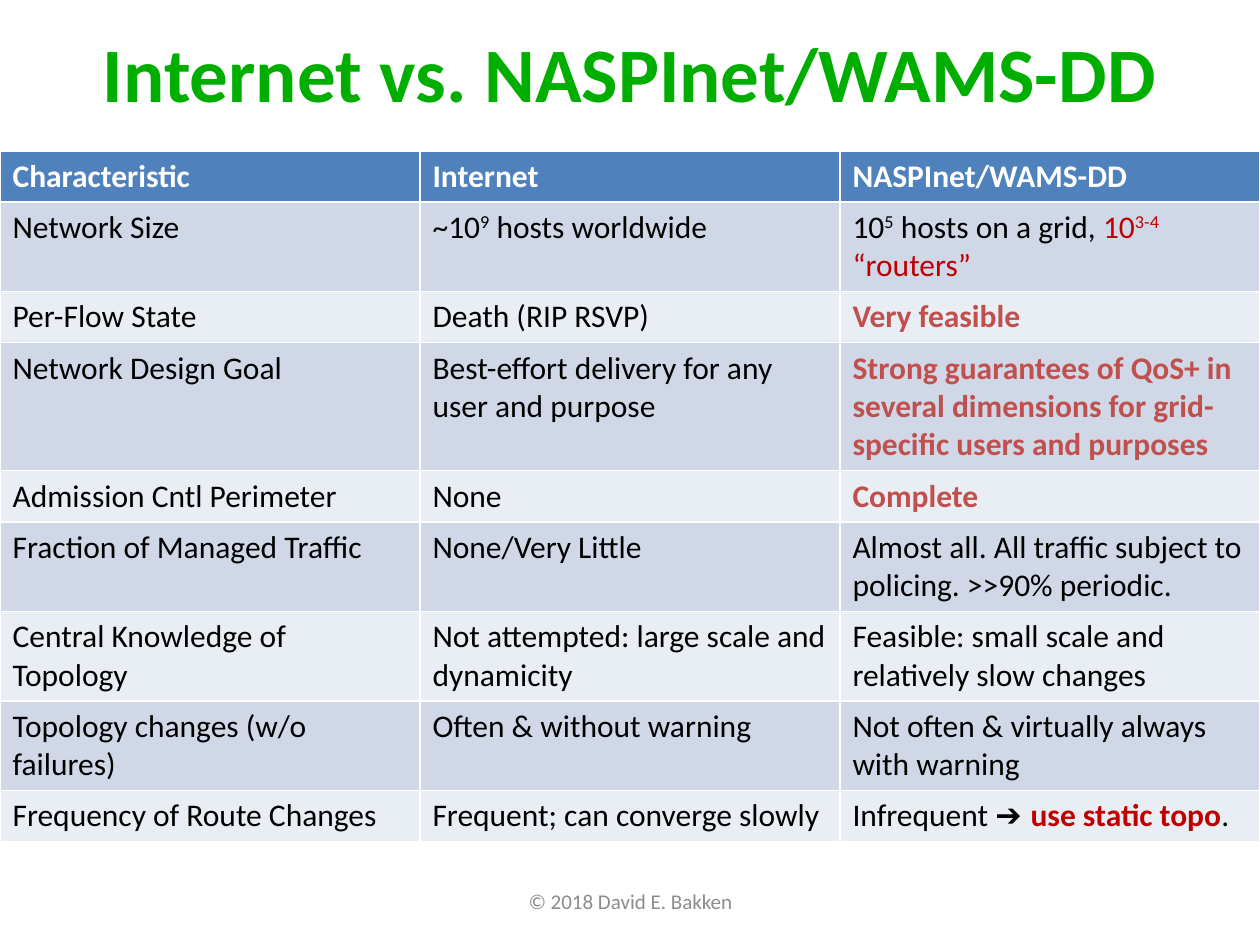
from pptx import Presentation
from pptx.dml.color import RGBColor
from pptx.enum.text import MSO_ANCHOR, PP_ALIGN
from pptx.util import Pt

CENTER = PP_ALIGN.CENTER
MIDDLE = MSO_ANCHOR.MIDDLE
EMU_PER_PX = 914400 / 126
FONT = "Calibri"
COLORS = {
    "title": "00AE00", "header": "4F81BD", "band_dark": "D0D8E8",
    "band_light": "E9EDF4", "white": "FFFFFF", "black": "000000",
    "red": "C00000", "brick": "C0504D", "gray": "8C8C8C",
}

TITLE = "Internet vs. NASPInet/WAMS-DD"
FOOTER = "© 2018 David E. Bakken"
HEADER = ("Characteristic", "Internet", "NASPInet/WAMS-DD")

# A cell is a string, or a list of (text, format) runs.
PLAIN = {}
SUPER = {"superscript": True}
RED = {"color": "red"}
STRONG = {"color": "brick", "bold": True}
ROWS = [
    ("Network Size",
     [("~10", PLAIN), ("9", SUPER), (" hosts worldwide", PLAIN)],
     [("10", PLAIN), ("5", SUPER), (" hosts on a grid, ", PLAIN),
      ("10", RED), ("3-4", RED | SUPER), (" “routers”", RED)]),
    ("Per-Flow State", "Death (RIP RSVP)", [("Very feasible", STRONG)]),
    ("Network Design Goal", "Best-effort delivery for any user and purpose",
     [("Strong guarantees of QoS+ in several dimensions for "
       "grid-specific users and purposes", STRONG)]),
    ("Admission Cntl Perimeter", "None", [("Complete", STRONG)]),
    ("Fraction of Managed Traffic", "None/Very Little",
     "Almost all. All traffic subject to policing. >>90% periodic."),
    ("Central Knowledge of Topology",
     "Not attempted: large scale and dynamicity",
     "Feasible: small scale and relatively slow changes"),
    ("Topology changes (w/o failures)", "Often & without warning",
     "Not often & virtually always with warning"),
    ("Frequency of Route Changes", "Frequent; can converge slowly",
     [("Infrequent ", PLAIN), ("➔ ", {"font": "Arial"}),
      ("use static topo", RED | {"bold": True}), (".", PLAIN)]),
]


def px(*values):
    return [round(value * EMU_PER_PX) for value in values]


def rgb(name):
    return RGBColor.from_string(COLORS[name])


def style_font(font, size, color, bold=False, name=FONT):
    font.name = name
    font.size = Pt(size)
    font.bold = bold
    font.color.rgb = rgb(color)


def fill_cell(cell, content, fill, color="black", bold=False):
    cell.fill.solid()
    cell.fill.fore_color.rgb = rgb(fill)
    paragraph = cell.text_frame.paragraphs[0]
    runs = [(content, PLAIN)] if isinstance(content, str) else content
    for text, style in runs:
        run = paragraph.add_run()
        run.text = text
        style_font(run.font, 18, style.get("color", color),
                   style.get("bold", bold), style.get("font", FONT))
        if style.get("superscript"):
            run._r.get_or_add_rPr().set("baseline", "30000")


def write_centered(shape, text, size, color, bold=False):
    frame = shape.text_frame
    frame.word_wrap = True
    frame.vertical_anchor = MIDDLE
    paragraph = frame.paragraphs[0]
    paragraph.text = text
    paragraph.alignment = CENTER
    style_font(paragraph.font, size, color, bold)


def add_comparison_table(slide):
    table = slide.shapes.add_table(
        len(ROWS) + 1, len(HEADER),
        *px(0, 151, 1260, 51 * (len(ROWS) + 1))).table
    for column, text in enumerate(HEADER):
        fill_cell(table.cell(0, column), text, "header", "white", True)
    for row, contents in enumerate(ROWS, start=1):
        band = "band_dark" if row % 2 else "band_light"
        for column, content in enumerate(contents):
            fill_cell(table.cell(row, column), content, band)


def main():
    presentation = Presentation()
    presentation.slide_width, presentation.slide_height = px(1260, 945)
    slide = presentation.slides.add_slide(presentation.slide_layouts[5])

    add_comparison_table(slide)

    title = slide.shapes.title
    title.left, title.top, title.width, title.height = px(63, 8, 1134, 128)
    write_centered(title, TITLE, 44, "title", True)

    footer = slide.shapes.add_textbox(*px(431, 876, 399, 50))
    write_centered(footer, FOOTER, 12, "gray")

    presentation.save("out.pptx")


if __name__ == "__main__":
    main()
